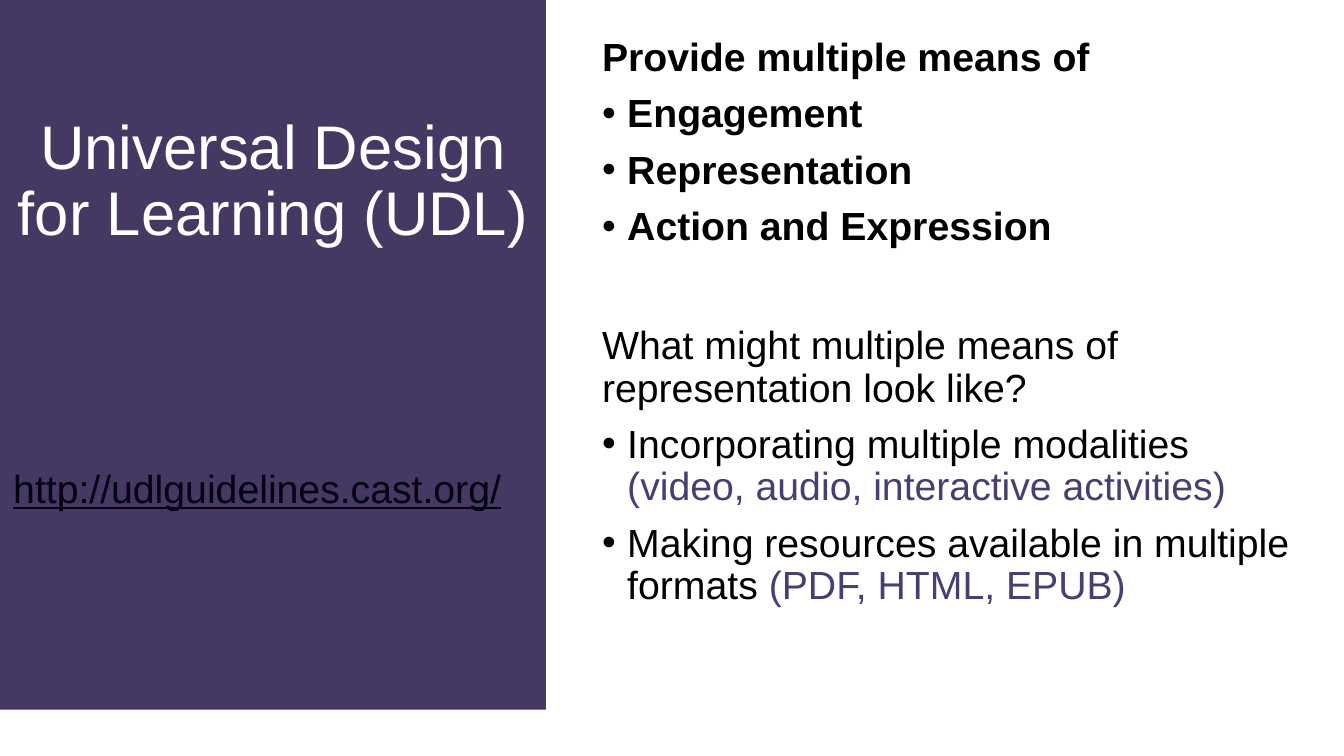
from dataclasses import dataclass

from lxml.etree import SubElement
from pptx import Presentation
from pptx.dml.color import RGBColor
from pptx.enum.shapes import MSO_SHAPE as Shape
from pptx.enum.text import MSO_ANCHOR as Anchor, MSO_AUTO_SIZE as AutoSize, PP_ALIGN as Align
from pptx.oxml.ns import qn
from pptx.util import Pt

PX = 5715  # EMU per px, 160 px to the inch


@dataclass(frozen=True)
class Theme:
    font: str = "Arial"
    panel: str = "453862"
    white: str = "FFFFFF"
    black: str = "000000"
    link: str = "000010"
    accent: str = "483E72"
    title_size: int = 33
    body_size: int = 21
    space_before: float = 7.5
    line_spacing: float = 0.9
    bullet_indent: int = 30


theme = Theme()


def write(frame, runs, color=theme.black, size=theme.body_size, bold=False,
          underline=False, bullet=False, align=Align.LEFT):
    """Add one paragraph; runs is a text or a list of (text, color) pairs."""
    first = not frame.text
    paragraph = frame.paragraphs[0] if first else frame.add_paragraph()
    paragraph.alignment = align
    paragraph.line_spacing = theme.line_spacing
    paragraph.space_before = Pt(0 if first else theme.space_before)
    if bullet:
        properties = paragraph._p.get_or_add_pPr()
        properties.set("marL", str(theme.bullet_indent * PX))
        properties.set("indent", str(-theme.bullet_indent * PX))
        bullet_color = SubElement(properties, qn("a:buClr"))
        SubElement(bullet_color, qn("a:srgbClr"), val=theme.black)
        SubElement(properties, qn("a:buFont"), typeface=theme.font)
        SubElement(properties, qn("a:buChar"), char="•")
    for text, run_color in [(runs, color)] if isinstance(runs, str) else runs:
        run = paragraph.add_run()
        run.text = text
        run.font.name = theme.font
        run.font.size = Pt(size)
        run.font.bold = bold
        run.font.underline = underline
        run.font.color.rgb = RGBColor.from_string(run_color)


def prepare_frame(shape, anchor=Anchor.TOP, top_inset=8):
    """Set wrapping, anchor and insets, and return the text frame."""
    frame = shape.text_frame
    frame.word_wrap = True
    frame.auto_size = AutoSize.NONE
    frame.vertical_anchor = anchor
    frame.margin_left = frame.margin_right = 16 * PX
    frame.margin_top, frame.margin_bottom = top_inset * PX, 8 * PX
    return frame


presentation = Presentation()
presentation.slide_width, presentation.slide_height = 1600 * PX, 900 * PX
slide = presentation.slides.add_slide(presentation.slide_layouts[5])

# Left column: title above, web address below, on one purple panel
panel_width, panel_height = 650 * PX, 434 * PX
title = slide.shapes.title
title.left, title.top, title.width, title.height = 0, 0, panel_width, panel_height
address = slide.shapes.add_shape(Shape.RECTANGLE, 0, 411 * PX, panel_width, panel_height)
address.shadow.inherit = False
address.line.fill.background()
for panel in (title, address):
    panel.fill.solid()
    panel.fill.fore_color.rgb = RGBColor.from_string(theme.panel)

write(prepare_frame(title, Anchor.MIDDLE), "Universal Design for Learning (UDL)",
      color=theme.white, size=theme.title_size, align=Align.CENTER)
write(prepare_frame(address, top_inset=148), "http://udlguidelines.cast.org/",
      color=theme.link, underline=True)

# Right column: the three principles
text_left, text_width = 701 * PX, 869 * PX
principles = prepare_frame(slide.shapes.add_textbox(text_left, 37 * PX, text_width, 315 * PX))
write(principles, "Provide multiple means of", bold=True)
for principle in ("Engagement", "Representation", "Action and Expression"):
    write(principles, principle, bold=True, bullet=True)

# Right column: question with examples
examples = prepare_frame(slide.shapes.add_textbox(text_left, 380 * PX, text_width, 376 * PX))
write(examples, "What might multiple means of representation look like?")
for practice, detail in (
    ("Incorporating multiple modalities ", "(video, audio, interactive activities)"),
    ("Making resources available in multiple formats ", "(PDF, HTML, EPUB)"),
):
    write(examples, [(practice, theme.black), (detail, theme.accent)], bullet=True)

presentation.save("out.pptx")
